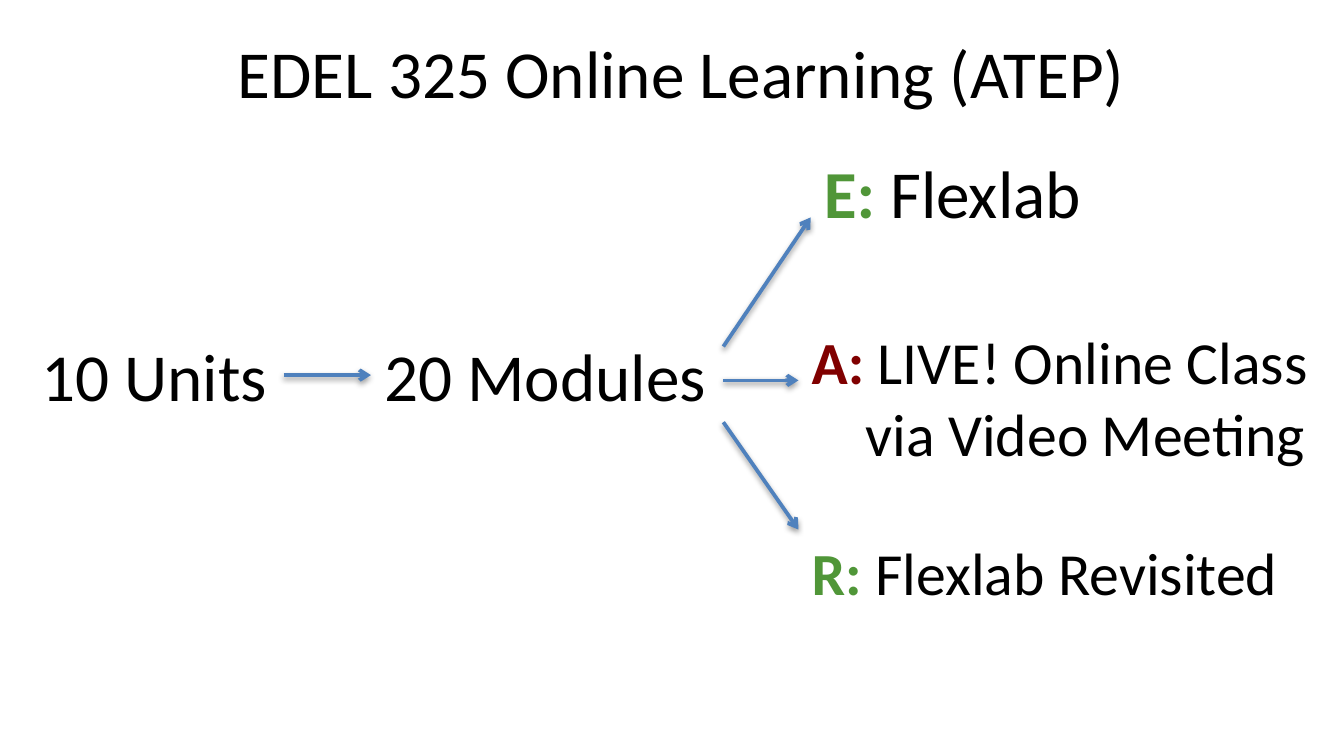
"""Build the online learning overview slide: units lead to modules, modules to three parts."""
from dataclasses import dataclass
from typing import Any

from lxml.etree import SubElement
from pptx import Presentation
from pptx.dml.color import RGBColor
from pptx.enum.shapes import MSO_CONNECTOR as Link, MSO_SHAPE as Preset
from pptx.enum.text import MSO_ANCHOR as Anchor, MSO_AUTO_SIZE as AutoSize, PP_ALIGN as Align
from pptx.oxml import parse_xml
from pptx.oxml.ns import nsdecls, qn
from pptx.util import Cm, Pt

BLACK = RGBColor(0x00, 0x00, 0x00)
WHITE = RGBColor(0xFF, 0xFF, 0xFF)
GREEN = RGBColor(0x50, 0x96, 0x38)
MAROON = RGBColor(0x80, 0x00, 0x00)
BLUE = RGBColor(0x4F, 0x81, 0xBD)

FRAME_FORMAT = {
    "word_wrap": False,
    "auto_size": AutoSize.SHAPE_TO_FIT_TEXT,
    "vertical_anchor": Anchor.TOP,
}
SHADOW = (
    f'<a:effectLst {nsdecls("a")}>'
    '<a:outerShdw blurRad="40000" dist="20000" dir="5400000" rotWithShape="0">'
    '<a:srgbClr val="000000"><a:alpha val="38000"/></a:srgbClr>'
    "</a:outerShdw></a:effectLst>"
)


@dataclass
class Label:
    """A text block, with an optional coloured letter and an indented second line."""

    left: float
    top: float
    width: float
    height: float
    text: str
    size: int = 36
    letter: str = ""
    accent: RGBColor = BLACK
    continuation: str = ""


@dataclass
class Arrow:
    """An arrow between two points in centimetres."""

    start: tuple[float, float]
    end: tuple[float, float]


TITLE = Label(4.24, 0.46, 17.55, 1.8, "EDEL 325 Online Learning (ATEP)")
UNITS = Label(0.53, 6.2, 4.83, 1.8, "10 Units")
PARTS = [
    Label(7.01, 6.2, 6.65, 1.8, "20 Modules"),
    Label(15.09, 6.02, 10.24, 3, " LIVE! Online Class", 32, "A:", MAROON, "via Video Meeting"),
    Label(15.32, 2.74, 5.44, 1.8, " Flexlab", 36, "E:", GREEN),
    Label(15.09, 10.01, 9.42, 1.63, " Flexlab Revisited", 32, "R:", GREEN),
]
ARROWS = [
    Arrow((13.67, 6.55), (15.32, 4.11)),
    Arrow((5.36, 7.09), (7.01, 7.09)),
    Arrow((13.67, 7.19), (15.09, 7.19)),
    Arrow((13.67, 7.98), (15.09, 10.01)),
]


def apply_format(target: Any, values: dict[str, Any]) -> None:
    for name, value in values.items():
        setattr(target, name, value)


def box(label: Label) -> tuple[Cm, Cm, Cm, Cm]:
    return Cm(label.left), Cm(label.top), Cm(label.width), Cm(label.height)


def add_words(paragraph: Any, text: str, size: int, color: RGBColor, bold: bool = False) -> None:
    words = paragraph.add_run()
    words.text = text
    apply_format(words.font, {"name": "Calibri", "size": Pt(size), "bold": bold})
    words.font.color.rgb = color


def write_label(holder: Any, label: Label) -> None:
    frame = holder.text_frame
    apply_format(frame, FRAME_FORMAT)
    first = frame.paragraphs[0]
    first.alignment = Align.LEFT
    if label.letter:
        add_words(first, label.letter, label.size, label.accent, True)
    add_words(first, label.text, label.size, BLACK)
    if label.continuation:
        second = frame.add_paragraph()
        second._p.get_or_add_pPr().set("marL", str(Cm(1.02)))
        add_words(second, label.continuation, label.size, BLACK)


def draw_arrow(slide: Any, arrow: Arrow) -> None:
    ends = [Cm(value) for value in arrow.start + arrow.end]
    connector = slide.shapes.add_connector(Link.STRAIGHT, *ends)
    connector.line.color.rgb = BLUE
    connector.line.width = Pt(2)
    SubElement(connector.line._get_or_add_ln(), qn("a:tailEnd"), type="arrow")
    connector._element.spPr.append(parse_xml(SHADOW))


def main() -> None:
    deck = Presentation()
    apply_format(deck, {"slide_width": Cm(25.4), "slide_height": Cm(14.29)})
    slide = deck.slides.add_slide(deck.slide_layouts[5])

    title = slide.shapes.title
    apply_format(title, dict(zip(("left", "top", "width", "height"), box(TITLE))))
    title.fill.solid()
    title.fill.fore_color.rgb = WHITE
    write_label(title, TITLE)

    units = slide.shapes.add_shape(Preset.FLOWCHART_PROCESS, *box(UNITS))
    units.shadow.inherit = False
    units.fill.background()
    units.line.fill.background()
    write_label(units, UNITS)

    for part in PARTS:
        write_label(slide.shapes.add_textbox(*box(part)), part)
    for arrow in ARROWS:
        draw_arrow(slide, arrow)
    deck.save("out.pptx")


if __name__ == "__main__":
    main()
